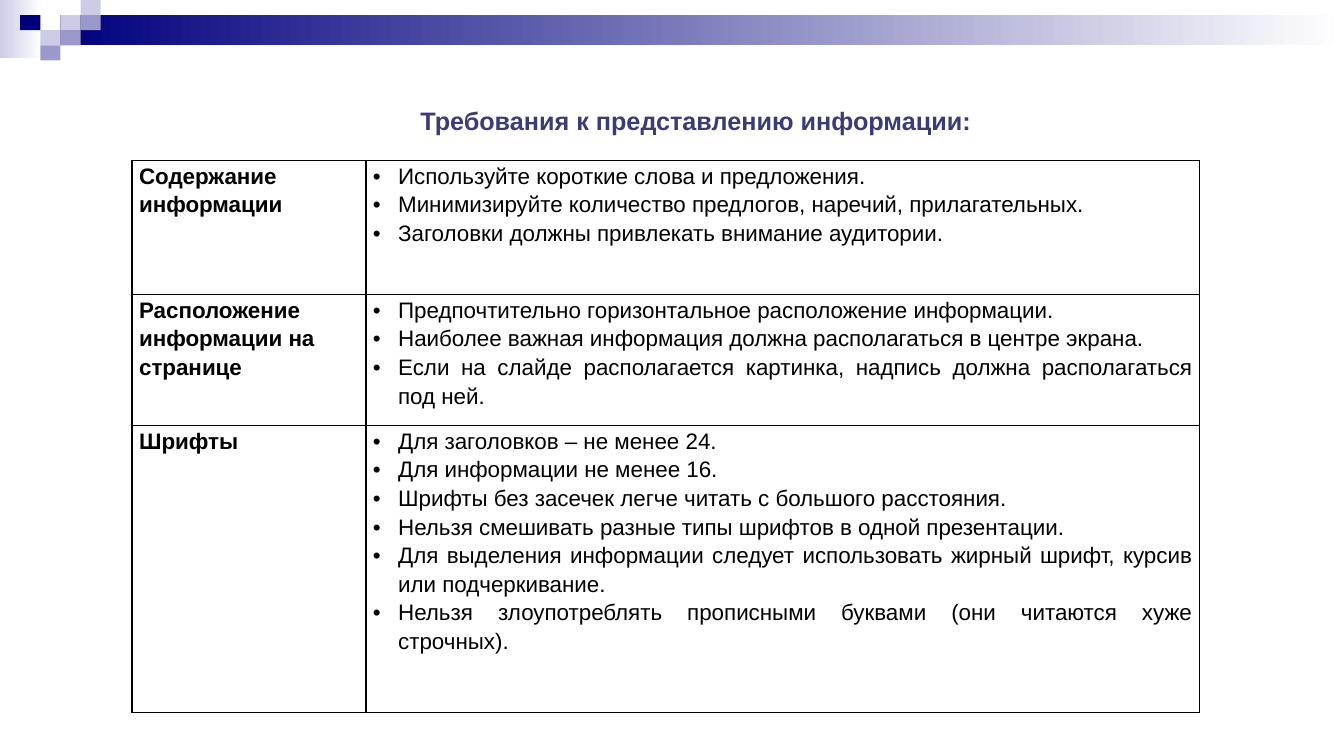
from lxml.etree import SubElement
from pptx import Presentation
from pptx.dml.color import RGBColor
from pptx.enum.shapes import MSO_SHAPE
from pptx.enum.text import MSO_ANCHOR, PP_ALIGN
from pptx.oxml import parse_xml
from pptx.oxml.ns import nsdecls, qn
from pptx.util import Inches, Pt

COLORS = {
    "navy": "00007D",
    "mid": "9999CC",
    "pale": "CCCCE6",
    "white": "FFFFFF",
    "black": "000000",
    "title": "3B3B77",
}
HEAD = {"name": "Arial", "size": Pt(18), "bold": True}
LABEL = {"name": "Arial", "size": Pt(16), "bold": True}
BODY = {"name": "Arial", "size": Pt(16), "bold": False}
INSETS = {
    "margin_left": Inches(0.07),
    "margin_right": Inches(0.07),
    "margin_top": 0,
    "margin_bottom": 0,
}


def add_box(place, *tones):
    """Draw a plain rectangle; two tones make a left-to-right gradient."""
    box = slide.shapes.add_shape(MSO_SHAPE.RECTANGLE, *map(Inches, place))
    box.shadow.inherit = False
    box.line.fill.background()
    if len(tones) == 1:
        box.fill.solid()
        box.fill.fore_color.rgb = RGBColor.from_string(COLORS[tones[0]])
        return
    box.fill.gradient()
    box.fill.gradient_angle = 0
    for stop, tone in zip(box.fill.gradient_stops, tones):
        stop.color.rgb = RGBColor.from_string(COLORS[tone])


def put_text(para, text, style, color, align):
    run = para.add_run()
    run.text = text
    for key, value in style.items():
        setattr(run.font, key, value)
    run.font.color.rgb = RGBColor.from_string(COLORS[color])
    para.alignment = align


deck = Presentation()
deck.slide_width, deck.slide_height = Inches(13.33), Inches(7.5)
slide = deck.slides.add_slide(deck.slide_layouts[6])

# Header band and its mosaic of small tiles
add_box((0, 0, 0.42, 0.58), "pale", "white")
add_box((0.6, 0.15, 12.73, 0.3), "navy", "white")
tiles = [
    (3, 1, "pale"), (4, 0, "pale"), (4, 1, "mid"), (2, 2, "pale"),
    (1, 1, "navy"), (3, 2, "mid"), (2, 3, "mid"),
]
for col, row, tone in tiles:
    add_box((col * 0.2, row * 0.15, 0.2, 0.15), tone)

# Table of requirements
topics = [
    ("Содержание информации", 1.33, [
        "Используйте короткие слова и предложения.",
        "Минимизируйте количество предлогов, наречий, прилагательных.",
        "Заголовки должны привлекать внимание аудитории.",
    ]),
    ("Расположение информации на странице", 1.3, [
        "Предпочтительно горизонтальное расположение информации.",
        "Наиболее важная информация должна располагаться в центре экрана.",
        "Если на слайде располагается картинка, надпись должна располагаться под ней.",
    ]),
    ("Шрифты", 2.85, [
        "Для заголовков – не менее 24.",
        "Для информации не менее 16.",
        "Шрифты без засечек легче читать с большого расстояния.",
        "Нельзя смешивать разные типы шрифтов в одной презентации.",
        "Для выделения информации следует использовать жирный шрифт, курсив или подчеркивание.",
        "Нельзя злоупотреблять прописными буквами (они читаются хуже строчных).",
    ]),
]
place = map(Inches, (1.31, 1.59, 10.59, 5.48))
table = slide.shapes.add_table(len(topics), 2, *place).table
table.first_row = table.horz_banding = False
for col, width in zip(table.columns, (2.32, 8.27)):
    col.width = Inches(width)

for row, (topic, height, rules) in zip(table.rows, topics):
    row.height = Inches(height)
    label, body = row.cells
    for cell in row.cells:
        for key, value in INSETS.items():
            setattr(cell, key, value)
        cell.fill.background()
        props = cell._tc.get_or_add_tcPr()
        for i, side in enumerate("LRTB"):
            props.insert(i, parse_xml(
                f'<a:ln{side} {nsdecls("a")} w="{Pt(1)}"><a:solidFill>'
                f'<a:srgbClr val="{COLORS["black"]}"/></a:solidFill></a:ln{side}>'
            ))

    para = label.text_frame.paragraphs[0]
    para.line_spacing = 1.15
    put_text(para, topic, LABEL, "black", PP_ALIGN.LEFT)

    frame = body.text_frame
    for i, rule in enumerate(rules):
        para = frame.add_paragraph() if i else frame.paragraphs[0]
        para.line_spacing = 1.15
        put_text(para, rule, BODY, "black", PP_ALIGN.JUSTIFY)
        props = para._p.get_or_add_pPr()
        props.set("marL", str(Inches(0.25)))
        props.set("indent", str(-Inches(0.25)))
        SubElement(props, qn("a:buFont"), typeface="Arial")
        SubElement(props, qn("a:buChar"), char="•")

# Title
title = slide.shapes.add_textbox(*map(Inches, (1.9, 0.99, 10, 0.4)))
frame = title.text_frame
frame.word_wrap = True
frame.vertical_anchor = MSO_ANCHOR.MIDDLE
put_text(frame.paragraphs[0], "Требования к представлению информации:",
         HEAD, "title", PP_ALIGN.CENTER)

deck.save("out.pptx")
